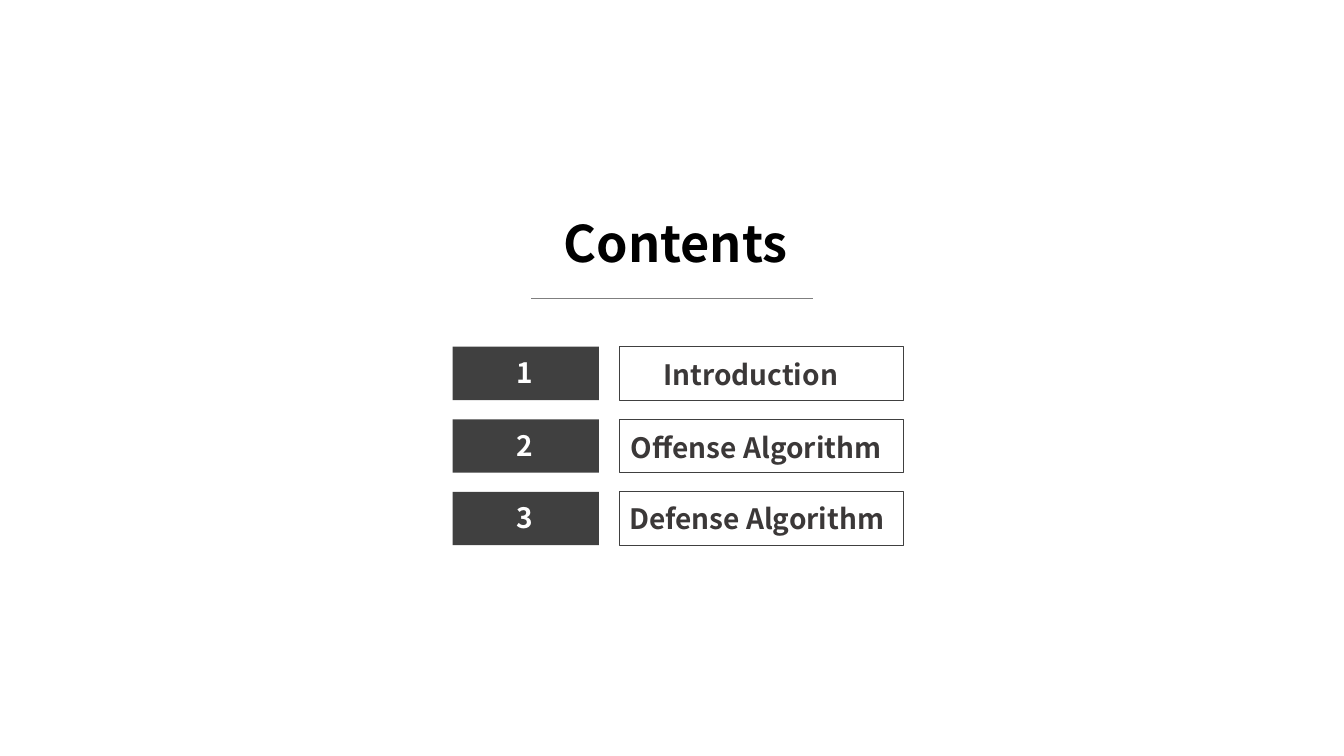
from pptx import Presentation
from pptx.dml.color import RGBColor
from pptx.enum.shapes import MSO_CONNECTOR as Connector, MSO_SHAPE as Shape
from pptx.enum.text import MSO_AUTO_SIZE as AutoSize, PP_ALIGN as Align
from pptx.oxml.ns import qn
from pptx.util import Inches, Pt
from lxml import etree

COLORS = {"title": "000000", "rule": "7F7F7F", "box": "404040",
          "topic": "3B3838", "number": "FFFFFF"}
FONT = "Noto Sans CJK SC"

prs = Presentation()
prs.slide_width, prs.slide_height = Inches(13.33), Inches(7.5)
slide = prs.slides.add_slide(prs.slide_layouts[6])


def color(name):
    return RGBColor.from_string(COLORS[name])


def add_text(text, left, top, width, height, *, size, fill, align=Align.LEFT):
    label = slide.shapes.add_textbox(Inches(left), Inches(top), Inches(width), Inches(height))
    label.text_frame.word_wrap = True
    label.text_frame.auto_size = AutoSize.SHAPE_TO_FIT_TEXT
    paragraph = label.text_frame.paragraphs[0]
    paragraph.alignment = align
    run = paragraph.add_run()
    run.text = text
    run.font.name, run.font.size, run.font.bold = FONT, Pt(size), True
    run.font.color.rgb = color(fill)


# Agenda rows: topic, text left, text width, text offset from the row top
topics = [
    ("Introduction", 6.48, 2.11, 0.06),
    ("Offense Algorithm", 6.16, 2.82, 0.06),
    ("Defense Algorithm", 6.14, 2.92, 0.05),
]
first_row, row_step, row_height = 3.44, 0.72, 0.53

for number, (topic, topic_left, topic_width, topic_offset) in enumerate(topics, 1):
    top = first_row + (number - 1) * row_step

    # Outlined topic box
    topic_box = slide.shapes.add_shape(
        Shape.RECTANGLE, Inches(6.14), Inches(top), Inches(2.82), Inches(row_height))
    topic_box.shadow.inherit = False
    topic_box.fill.background()
    topic_box.line.color.rgb = color("box")
    topic_box.line.width = Pt(0.75)
    add_text(topic, topic_left, top + topic_offset, topic_width, 0.44, size=20, fill="topic")

    # Filled number box
    number_box = slide.shapes.add_shape(
        Shape.RECTANGLE, Inches(4.49), Inches(top), Inches(1.45), Inches(row_height))
    number_box.shadow.inherit = False
    number_box.fill.solid()
    number_box.fill.fore_color.rgb = color("box")
    number_box.line.fill.background()
    add_text(str(number), 4.68, top + 0.04, 1.05, 0.44,
             size=20, fill="number", align=Align.CENTER)

# Title and rule
add_text("Contents", 5.49, 2.06, 2.56, 0.71, size=36, fill="title")
title_rule = slide.shapes.add_connector(
    Connector.STRAIGHT, Inches(5.27), Inches(2.96), Inches(8.06), Inches(2.96))
title_rule.line.color.rgb = color("rule")
title_rule.line.width = Pt(0.5)
etree.SubElement(title_rule.element.spPr, qn("a:effectLst"))

prs.save("out.pptx")
